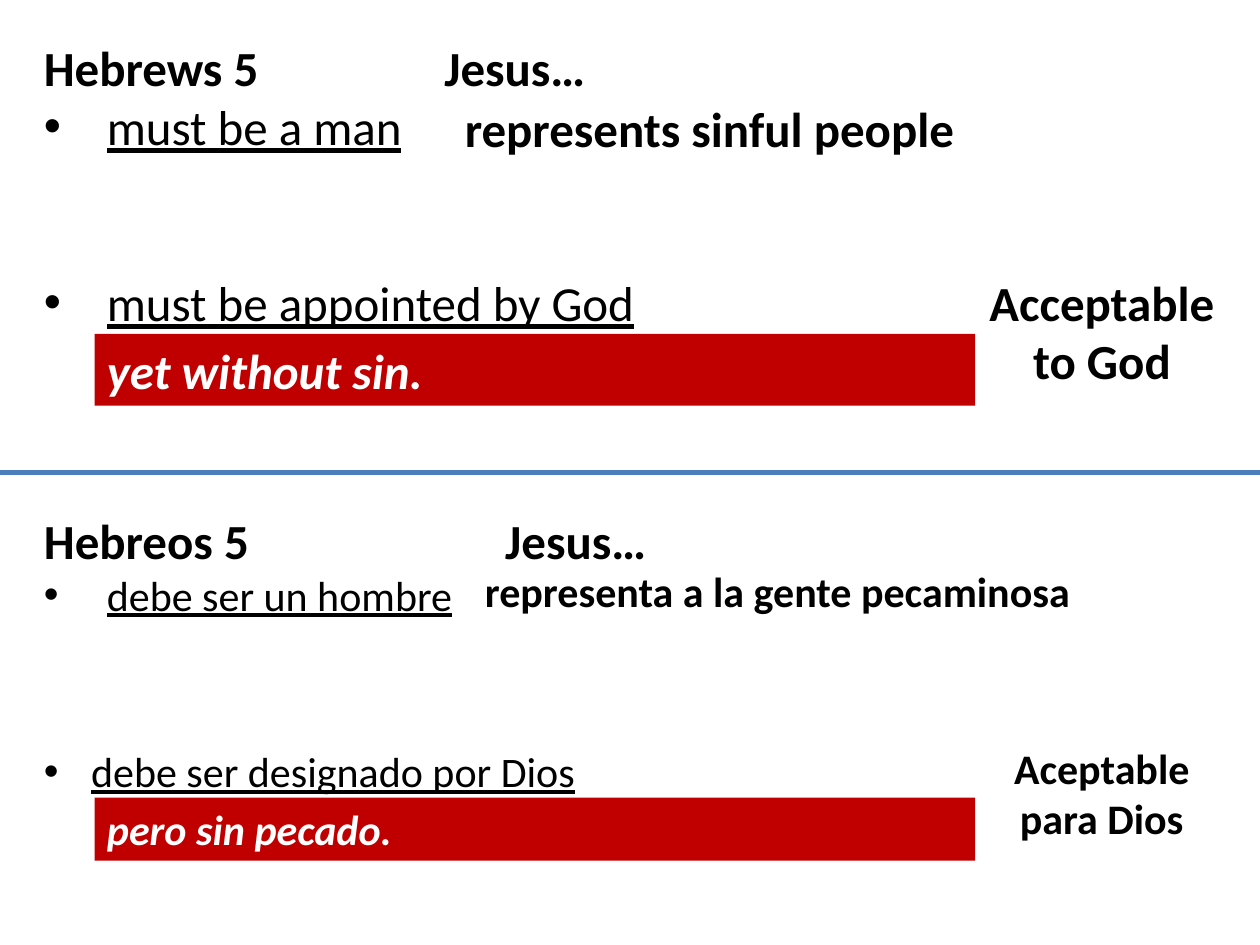
from pptx import Presentation
from pptx.dml.color import RGBColor
from pptx.enum.shapes import MSO_CONNECTOR, MSO_SHAPE
from pptx.enum.text import MSO_ANCHOR, PP_ALIGN
from pptx.oxml.ns import qn
from pptx.util import Pt
from lxml.etree import SubElement

BLACK, WHITE, RED, BLUE = "000000", "FFFFFF", "C00000", "4B7EBC"


def rgb(value):
    """Turn a hex string into a colour."""
    return RGBColor.from_string(value)


def write(tf, text, size=28, color=BLACK, bold=True, italic=False,
          underline=False, align=PP_ALIGN.LEFT, indent=0, before=0):
    """Add a paragraph to a text frame; a positive indent gives it a bullet."""
    p = tf.paragraphs[0] if not tf.text else tf.add_paragraph()
    p.alignment, p.space_before = align, Pt(before)
    r = p.add_run()
    r.text = text
    f = r.font
    f.name, f.size, f.color.rgb = "Calibri", Pt(size), rgb(color)
    f.bold, f.italic, f.underline = bold, italic, underline
    if indent:
        pPr = p._p.get_or_add_pPr()
        pPr.set("marL", str(Pt(indent)))
        pPr.set("indent", str(-Pt(indent)))
        SubElement(pPr, qn("a:buFont")).set("typeface", "Arial")
        SubElement(pPr, qn("a:buChar")).set("char", "•")


def add_box(s, top, box, fill=None, wrap=True):
    """Add a text box, or a filled rectangle, and return its text frame."""
    x, y, w, h = box
    place = Pt(x), Pt(top + y), Pt(w), Pt(h)
    if fill:
        sp = s.shapes.add_shape(MSO_SHAPE.RECTANGLE, *place)
        sp.shadow.inherit = False
        sp.fill.solid()
        sp.fill.fore_color.rgb = rgb(fill)
        sp.line.fill.background()
    else:
        sp = s.shapes.add_textbox(*place)
    tf = sp.text_frame
    tf.word_wrap, tf.vertical_anchor = wrap, MSO_ANCHOR.TOP
    return tf


def add_panel(s, top, size, lists, jesus, claim, bar, verdict):
    """Build one language's half of the slide, measured from its top edge."""
    for box, heading, bullets in lists:
        tf = add_box(s, top, box)
        if heading:
            write(tf, heading)
        for text, indent, before in bullets:
            write(tf, text, size, bold=False, underline=True,
                  indent=indent, before=before)
    write(add_box(s, top, jesus), "Jesus…", align=PP_ALIGN.CENTER)
    box, text = bar
    write(add_box(s, top, box, RED), text, size, WHITE, italic=True)
    box, lines = verdict
    tf = add_box(s, top, box, wrap=False)
    for line in lines:
        write(tf, line, size, align=PP_ALIGN.CENTER)
    box, text, fill = claim
    write(add_box(s, top, box, fill, wrap=False), text, size)


def add_divider(s, y, width):
    """Draw the rule between the two halves."""
    c = s.shapes.add_connector(MSO_CONNECTOR.STRAIGHT, 0, Pt(y), Pt(width), Pt(y))
    c.line.color.rgb, c.line.width = rgb(BLUE), Pt(3)
    SubElement(c._element.spPr, qn("a:effectLst"))


def main():
    """Build and save the slide."""
    prs = Presentation()
    prs.slide_width, prs.slide_height = Pt(720), Pt(540)
    s = prs.slides.add_slide(prs.slide_layouts[6])
    add_divider(s, 270, 720)
    add_panel(
        s, 0, 28,
        lists=[((18, 18, 570, 177), "Hebrews 5",
                [("must be a man", 36, 0), ("must be appointed by God", 36, 67)])],
        jesus=(170, 18, 248.4, 41),
        claim=((258.5, 52.6, 414, 41), "represents sinful people", WHITE),
        bar=((54, 190.8, 503.3, 41), "yet without sin."),
        verdict=((557.3, 152, 144.7, 75), ["Acceptable", "to God"]))
    add_panel(
        s, 270, 24,
        lists=[((18, 18, 672, 70.6), "Hebreos 5", [("debe ser un hombre", 36, 0)]),
               ((18, 152.6, 400, 36), None, [("debe ser designado por Dios", 27, 0)])],
        jesus=(177.8, 18, 302.4, 41),
        claim=((270, 49.7, 352, 36), "representa a la gente pecaminosa", None),
        bar=((54, 185.8, 503.3, 36), "pero sin pecado."),
        verdict=((552.2, 150.5, 154.8, 65.5), ["Aceptable", "para Dios"]))
    prs.save("out.pptx")


if __name__ == "__main__":
    main()
